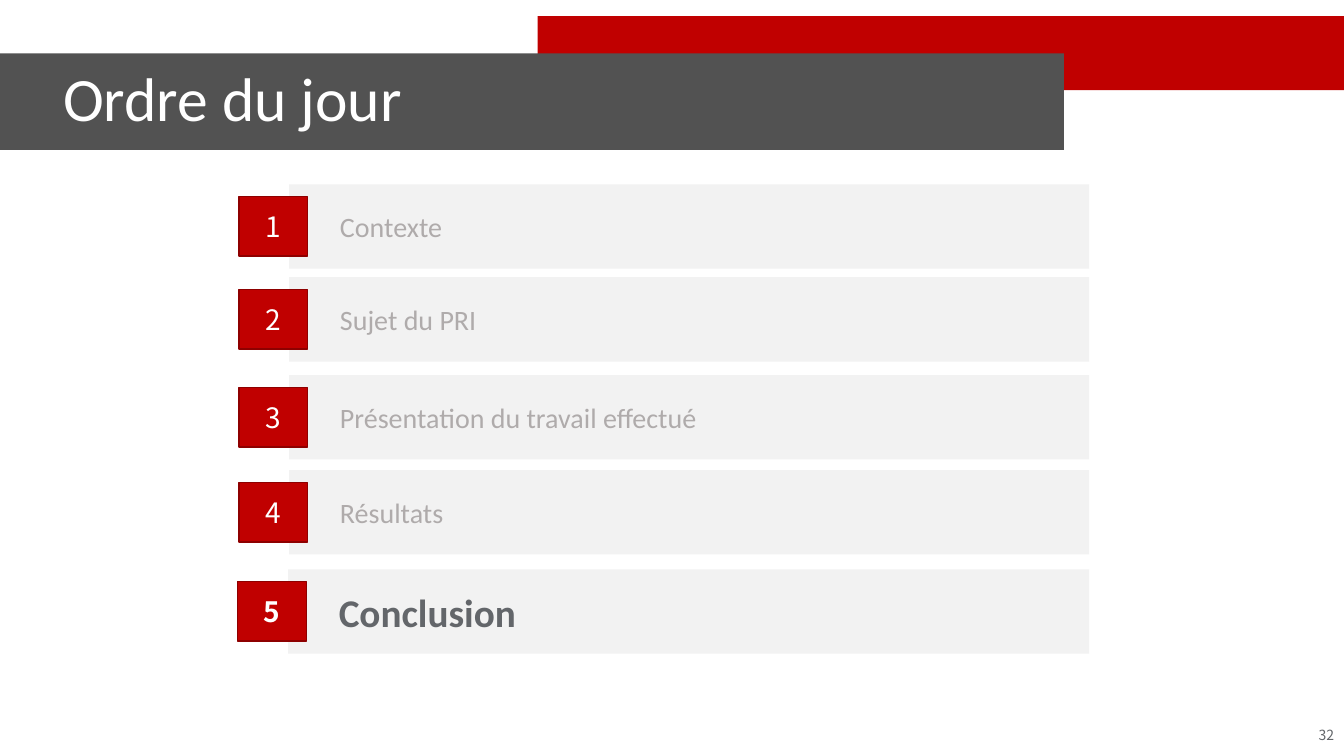
"""Agenda slide with five numbered items, the last one highlighted."""
from pptx import Presentation
from pptx.dml.color import RGBColor
from pptx.enum.shapes import MSO_SHAPE
from pptx.enum.text import MSO_ANCHOR, PP_ALIGN
from pptx.util import Pt

RECT = MSO_SHAPE.RECTANGLE
MIDDLE = MSO_ANCHOR.MIDDLE
LEFT, CENTER, RIGHT = PP_ALIGN.LEFT, PP_ALIGN.CENTER, PP_ALIGN.RIGHT
COLORS = {"red": "C00000", "dark_red": "8E0000", "title_bar": "525252", "row": "F2F2F2",
          "muted": "AFABAB", "strong": "63666A", "white": "FFFFFF"}
TEXT_FONT, NUMBER_FONT = "Calibri", "Noto Sans CJK KR"


def add_rect(shapes, x, y, w, h, fill, line=None):
    sp = shapes.add_shape(RECT, Pt(x), Pt(y), Pt(w), Pt(h))
    sp.shadow.inherit = False
    sp.fill.solid()
    sp.fill.fore_color.rgb = RGBColor.from_string(COLORS[fill])
    if line:
        sp.line.color.rgb = RGBColor.from_string(COLORS[line])
        sp.line.width = Pt(1)
    else:
        sp.line.fill.background()
    return sp


def set_text(sp, text, size, color, font, align=LEFT, bold=False, inset=(7.2, 3.6)):
    tf = sp.text_frame
    tf.word_wrap = True
    tf.vertical_anchor = MIDDLE
    tf.margin_left = tf.margin_right = Pt(inset[0])
    tf.margin_top = tf.margin_bottom = Pt(inset[1])
    p = tf.paragraphs[0]
    p.text = text
    p.alignment = align
    p.font.size = Pt(size)
    p.font.name = font
    p.font.bold = bold
    p.font.color.rgb = RGBColor.from_string(COLORS[color])
    return p


prs = Presentation()
prs.slide_width, prs.slide_height = Pt(960), Pt(540)
s = prs.slides.add_slide(prs.slide_layouts[6])

add_rect(s.shapes, 384, 11.5, 576, 53, "red")
add_rect(s.shapes, 0, 38.2, 760, 68.8, "title_bar")

title = s.shapes.add_textbox(Pt(38), Pt(25), Pt(722), Pt(95))
p = set_text(title, "Ordre du jour", 44, "white", TEXT_FONT)
p.line_spacing = 0.9

page = s.shapes.add_textbox(Pt(744), Pt(510.5), Pt(216), Pt(28.8))
set_text(page, "32", 10, "strong", NUMBER_FONT, RIGHT)

ROW_RIGHT, ROW_H = 778, 60.3
agenda = [("Contexte", 131.7), ("Sujet du PRI", 198), ("Présentation du travail effectué", 267.9),
          ("Résultats", 335.8), ("Conclusion", 406.7)]

for number, (label, top) in enumerate(agenda, 1):
    current = number == len(agenda)
    left = 205.8 if current else 206.6
    size, color, label_h = (28, "strong", 39.8) if current else (20, "muted", 30)
    row = s.shapes.add_group_shape().shapes
    add_rect(row, left, top, ROW_RIGHT - left, ROW_H, "row")
    box = row.add_textbox(Pt(left + 33.2), Pt(top + (ROW_H - label_h) / 2), Pt(519), Pt(label_h))
    set_text(box, label, size, color, TEXT_FONT, bold=current, inset=(3, 3))
    badge = add_rect(row, left - 36, top + 8.8, 49, 42.5, "red", "dark_red")
    set_text(badge, str(number), 20, "white", NUMBER_FONT, CENTER, current, (0, 0))

prs.save("out.pptx")
